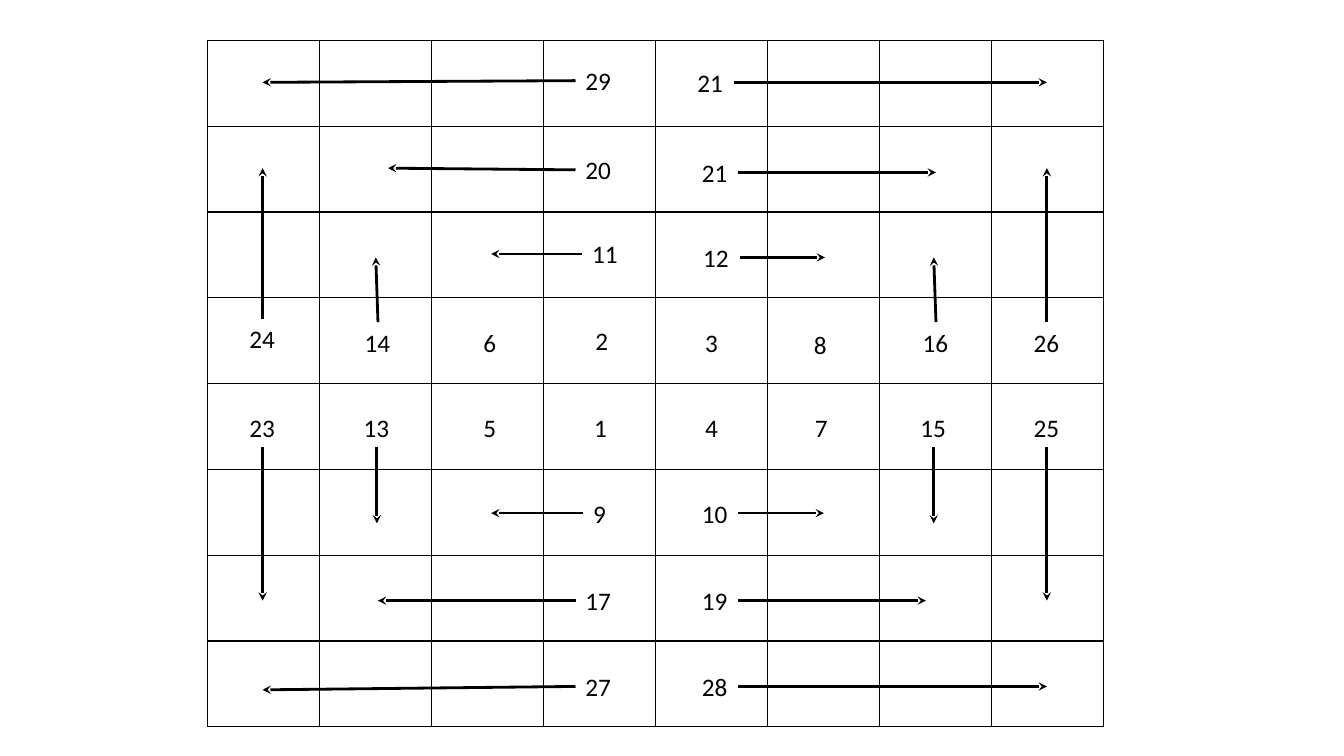
"""Build a slide with an eight by eight grid of numbered steps and arrows."""
from lxml.etree import SubElement
from pptx import Presentation
from pptx.dml.color import RGBColor
from pptx.enum.shapes import MSO_CONNECTOR as Connector
from pptx.enum.text import MSO_AUTO_SIZE as AutoSize
from pptx.oxml.ns import qn
from pptx.util import Inches, Pt

STEPS = [
    ("1", (3.51, 4.51), None),
    ("2", (3.52, 3.5), None),
    ("3", (4.5, 3.52), None),
    ("4", (4.5, 4.51), None),
    ("5", (2.52, 4.51), None),
    ("6", (2.52, 3.52), None),
    ("7", (5.48, 4.51), None),
    ("8", (5.47, 3.55), None),
    ("9", (3.5, 5.51), (2.53, 5.51)),
    ("10", (4.53, 5.51), (5.5, 5.51)),
    ("11", (3.55, 2.49), (2.53, 2.49)),
    ("12", (4.54, 2.53), (5.51, 2.53)),
    ("13", (1.51, 4.51), (1.51, 5.63)),
    ("14", (1.52, 3.52), (1.5, 2.53)),
    ("15", (6.48, 4.51), (6.48, 5.63)),
    ("16", (6.5, 3.52), (6.48, 2.53)),
    ("17", (3.49, 6.53), (1.52, 6.53)),
    ("19", (4.53, 6.53), (6.41, 6.53)),
    ("20", (3.49, 1.51), (1.61, 1.49)),
    ("21", (4.53, 1.54), (6.5, 1.54)),
    ("23", (0.49, 4.51), (0.49, 6.53)),
    ("24", (0.49, 3.48), (0.49, 1.49)),
    ("25", (7.49, 4.51), (7.49, 6.53)),
    ("26", (7.49, 3.52), (7.49, 1.49)),
    ("27", (3.49, 7.53), (0.49, 7.57)),
    ("28", (4.53, 7.53), (7.49, 7.53)),
    ("29", (3.49, 0.47), (0.49, 0.49)),
    ("21", (4.49, 0.49), (7.49, 0.49)),
]
BLACK = RGBColor(0, 0, 0)
FONT = {"name": "Calibri", "size": Pt(18)}
FRAME = {"word_wrap": False, "auto_size": AutoSize.SHAPE_TO_FIT_TEXT}
COUNT = 8
LEFT, TOP, WIDTH, HEIGHT = (Inches(n) for n in (2.06, 0.4, 8.89, 6.81))
LABEL_WIDTHS = {1: Inches(0.33), 2: Inches(0.46)}
LABEL_HEIGHT = Inches(0.4)


def apply_format(target, values):
    for name, value in values.items():
        setattr(target, name, value)


def place(point):
    column, row = point
    return round(LEFT + column * WIDTH / COUNT), round(TOP + row * HEIGHT / COUNT)


def add_grid(slide):
    table = slide.shapes.add_table(COUNT, COUNT, LEFT, TOP, WIDTH, HEIGHT).table
    apply_format(table, {"first_row": False, "horz_banding": False})
    for cell in table.iter_cells():
        properties = cell._tc.get_or_add_tcPr()
        for side in ("lnL", "lnR", "lnT", "lnB"):
            border = SubElement(properties, qn(f"a:{side}"), w=str(Pt(1)))
            fill = SubElement(border, qn("a:solidFill"))
            SubElement(fill, qn("a:srgbClr"), val=str(BLACK))
        cell.fill.background()


def add_label(slide, text, x, y):
    width = LABEL_WIDTHS[len(text)]
    box = slide.shapes.add_textbox(x - width // 2, y - LABEL_HEIGHT // 2, width, LABEL_HEIGHT)
    apply_format(box.text_frame, FRAME)
    run = box.text_frame.paragraphs[0].add_run()
    run.text = text
    apply_format(run.font, FONT)
    run.font.color.rgb = BLACK


def add_arrow(slide, text, x, y, tip_x, tip_y):
    if abs(tip_x - x) > abs(tip_y - y):
        x += LABEL_WIDTHS[len(text)] // 2 * (1 if tip_x > x else -1)
    else:
        y += LABEL_HEIGHT // 2 * (1 if tip_y > y else -1)
    arrow = slide.shapes.add_connector(Connector.STRAIGHT, x, y, tip_x, tip_y)
    arrow.line.color.rgb = BLACK
    arrow.line.width = Pt(2)
    SubElement(arrow.line._get_or_add_ln(), qn("a:tailEnd"), type="stealth")
    SubElement(arrow._element.spPr, qn("a:effectLst"))


def main():
    presentation = Presentation()
    apply_format(presentation, {"slide_width": Inches(13.33), "slide_height": Inches(7.5)})
    slide = presentation.slides.add_slide(presentation.slide_layouts[6])
    add_grid(slide)
    for text, centre, tip in STEPS:
        add_label(slide, text, *place(centre))
        if tip:
            add_arrow(slide, text, *place(centre), *place(tip))
    presentation.save("out.pptx")


if __name__ == "__main__":
    main()
